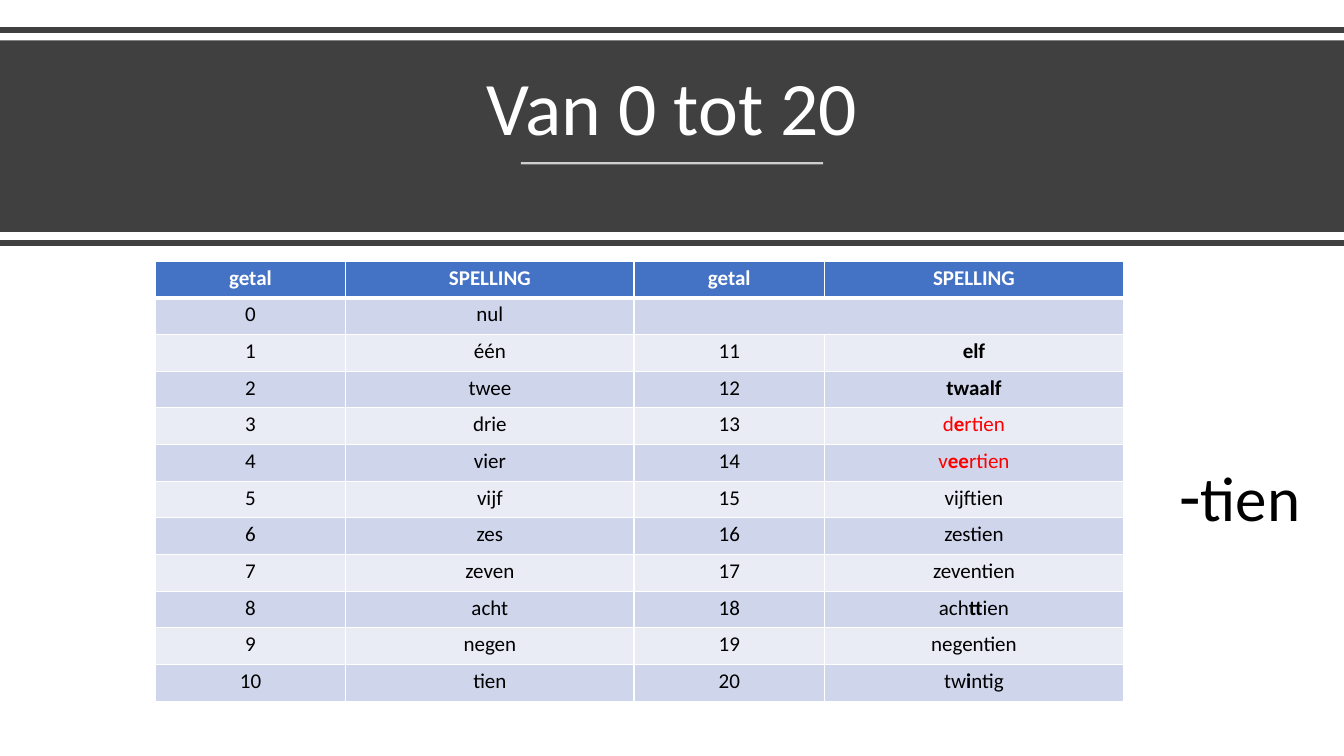
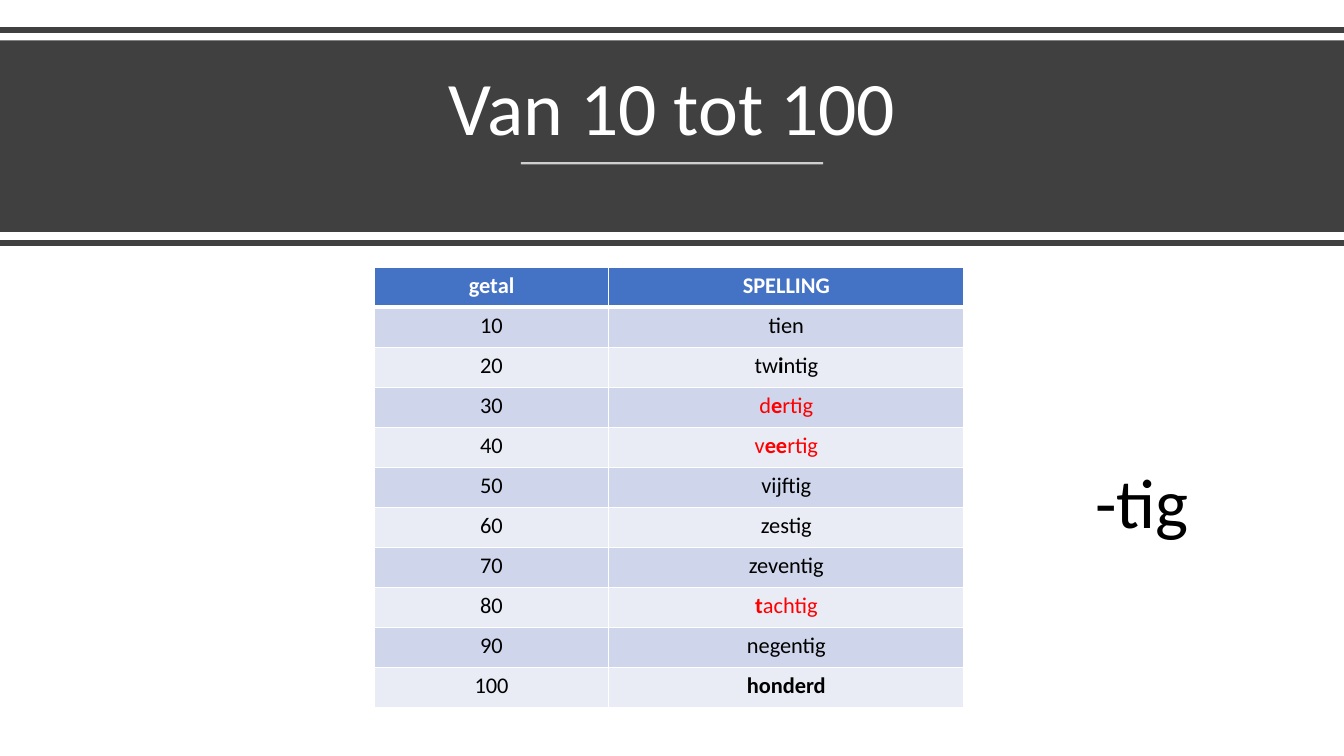
import pptx
import pptx.util
import pptx.dml.color
import pptx.enum.shapes
import pptx.enum.text
import pptx.oxml
import pptx.oxml.ns
import lxml.etree

Pt = pptx.util.Pt
qn = pptx.oxml.ns.qn
CENTER = pptx.enum.text.PP_ALIGN.CENTER
BOTTOM = pptx.enum.text.MSO_ANCHOR.BOTTOM
TOP = pptx.enum.text.MSO_ANCHOR.TOP

FONT = "Calibri"
DARK, WHITE, BLACK, RED = "404040", "FFFFFF", "000000", "FF0000"
HEADER, BANDS = "4472C4", ("E9EBF5", "CFD5EA")
WIDTH, HEIGHT = 960, 540
RULE_WIDTH = 216

# *...* is bold, a leading ! makes the word red
SLIDES = [
    {
        "title": "Van 0 tot 20",
        "at": (110.9, 186.5), "cols": (136.1, 205.9, 136.1, 213.5), "row": 26.2,
        "size": 15, "insets": (5.8, 2.9),
        "rows": [
            ("getal", "SPELLING", "getal", "SPELLING"),
            ("0", "nul", "", ""),
            ("1", "één", "11", "*elf*"),
            ("2", "twee", "12", "*twaalf*"),
            ("3", "drie", "13", "!d*e*rtien"),
            ("4", "vier", "14", "!v*ee*rtien"),
            ("5", "vijf", "15", "vijftien"),
            ("6", "zes", "16", "zestien"),
            ("7", "zeven", "17", "zeventien"),
            ("8", "acht", "18", "ach*tt*ien"),
            ("9", "negen", "19", "negentien"),
            ("10", "tien", "20", "tw*i*ntig"),
        ],
        "merge": ((1, 2), (1, 3)),
        "ending": [("-", 50), ("tien", 45)], "ending_at": (835.2, 319, 110.2, 67.7),
    },
    {
        "title": "Van 10 tot 100",
        "at": (267.4, 190.8), "cols": (167.4, 253.8), "row": 28.6,
        "size": 16, "insets": (6.6, 3.3),
        "rows": [
            ("getal", "SPELLING"),
            ("10", "tien"),
            ("20", "tw*i*ntig"),
            ("30", "!d*e*rtig"),
            ("40", "!v*ee*rtig"),
            ("50", "vijftig"),
            ("60", "zestig"),
            ("70", "zeventig"),
            ("80", "!*t*achtig"),
            ("90", "negentig"),
            ("100", "*honderd*"),
        ],
        "merge": None,
        "ending": [("-tig", 50)], "ending_at": (775.4, 324, 83.5, 67.7),
    },
]


def rgb(color):
    """Turn a hex string into a colour."""
    return pptx.dml.color.RGBColor.from_string(color)


def add_run(p, text, size, color, bold=False):
    """Add one formatted run to a paragraph."""
    r = p.add_run()
    r.text = text
    r.font.name, r.font.size, r.font.bold = FONT, Pt(size), bold
    r.font.color.rgb = rgb(color)


def add_text(s, box, runs, color, align=None, anchor=TOP, spacing=None):
    """Add a one-paragraph text box made of (text, size) runs."""
    tf = s.shapes.add_textbox(*map(Pt, box)).text_frame
    tf.word_wrap, tf.vertical_anchor = True, anchor
    p = tf.paragraphs[0]
    p.alignment, p.line_spacing = align, spacing
    for text, size in runs:
        add_run(p, text, size, color)


def add_rule(s, left, right, y, color, width, alpha=None):
    """Add a horizontal line, see-through when alpha is given."""
    line = s.shapes.add_connector(pptx.enum.shapes.MSO_CONNECTOR.STRAIGHT,
                                  Pt(left), Pt(y), Pt(right), Pt(y))
    line.line.width = Pt(width)
    line.line.color.rgb = rgb(color)
    pr = line._element.spPr
    if alpha:
        lxml.etree.SubElement(next(pr.iter(qn("a:srgbClr"))), qn("a:alpha"), val=str(alpha * 1000))
    lxml.etree.SubElement(pr, qn("a:effectLst"))


def add_heading(s, title):
    """Draw the dark band with its lines and the title."""
    add_rule(s, 0, WIDTH, 21.6, DARK, 4)
    band = s.shapes.add_shape(pptx.enum.shapes.MSO_SHAPE.RECTANGLE, 0, Pt(28.8), Pt(WIDTH), Pt(136.8))
    band.shadow.inherit = False
    band.fill.solid()
    band.fill.fore_color.rgb = rgb(DARK)
    band.line.fill.background()
    add_text(s, (41.5, 38.9, 877, 73.4), [(title, 54)], WHITE, CENTER, BOTTOM, 0.9)
    add_rule(s, (WIDTH - RULE_WIDTH) / 2, (WIDTH + RULE_WIDTH) / 2, 116.6, WHITE, 1.5, 75)
    add_rule(s, 0, WIDTH, 173.5, DARK, 4)


def set_borders(cell, top, bottom):
    """Give a cell white borders, one point wide at the sides."""
    pr = cell._tc.get_or_add_tcPr()
    for i, (side, width) in enumerate((("L", 1), ("R", 1), ("T", top), ("B", bottom))):
        ln = pptx.oxml.parse_xml(
            f'<a:ln{side} {pptx.oxml.ns.nsdecls("a")} w="{Pt(width)}"><a:solidFill>'
            f'<a:srgbClr val="{WHITE}"/></a:solidFill></a:ln{side}>')
        pr.insert(i, ln)


def fill_cell(cell, text, row, size, insets):
    """Write and style one table cell."""
    header = row == 0
    cell.margin_left = cell.margin_right = Pt(insets[0])
    cell.margin_top = cell.margin_bottom = Pt(insets[1])
    cell.fill.solid()
    cell.fill.fore_color.rgb = rgb(HEADER if header else BANDS[row % 2])
    set_borders(cell, 3 if row == 1 else 1, 3 if header else 1)
    p = cell.text_frame.paragraphs[0]
    p.alignment = CENTER
    color = WHITE if header else RED if text.startswith("!") else BLACK
    for i, part in enumerate(text.lstrip("!").split("*")):
        if part:
            add_run(p, part, size, color, header or i % 2 == 1)
    if not text:
        lxml.etree.SubElement(p._p, qn("a:endParaRPr"), sz=str(size * 100))


def add_number_table(s, data):
    """Add the table of numbers and their spelling."""
    rows, cols = data["rows"], data["cols"]
    left, top = data["at"]
    table = s.shapes.add_table(len(rows), len(cols), Pt(left), Pt(top),
                               Pt(sum(cols)), Pt(data["row"] * len(rows))).table
    for column, width in zip(table.columns, cols):
        column.width = Pt(width)
    for i, words in enumerate(rows):
        table.rows[i].height = Pt(data["row"])
        for j, text in enumerate(words):
            fill_cell(table.cell(i, j), text, i, data["size"], data["insets"])
    if data["merge"]:
        first, last = data["merge"]
        table.cell(*first).merge(table.cell(*last))


def main():
    """Build both slides and save them."""
    prs = pptx.Presentation()
    prs.slide_width, prs.slide_height = Pt(WIDTH), Pt(HEIGHT)
    for data in SLIDES:
        s = prs.slides.add_slide(prs.slide_layouts[6])
        add_heading(s, data["title"])
        add_number_table(s, data)
        add_text(s, data["ending_at"], data["ending"], BLACK)
    prs.save("out.pptx")


if __name__ == "__main__":
    main()
